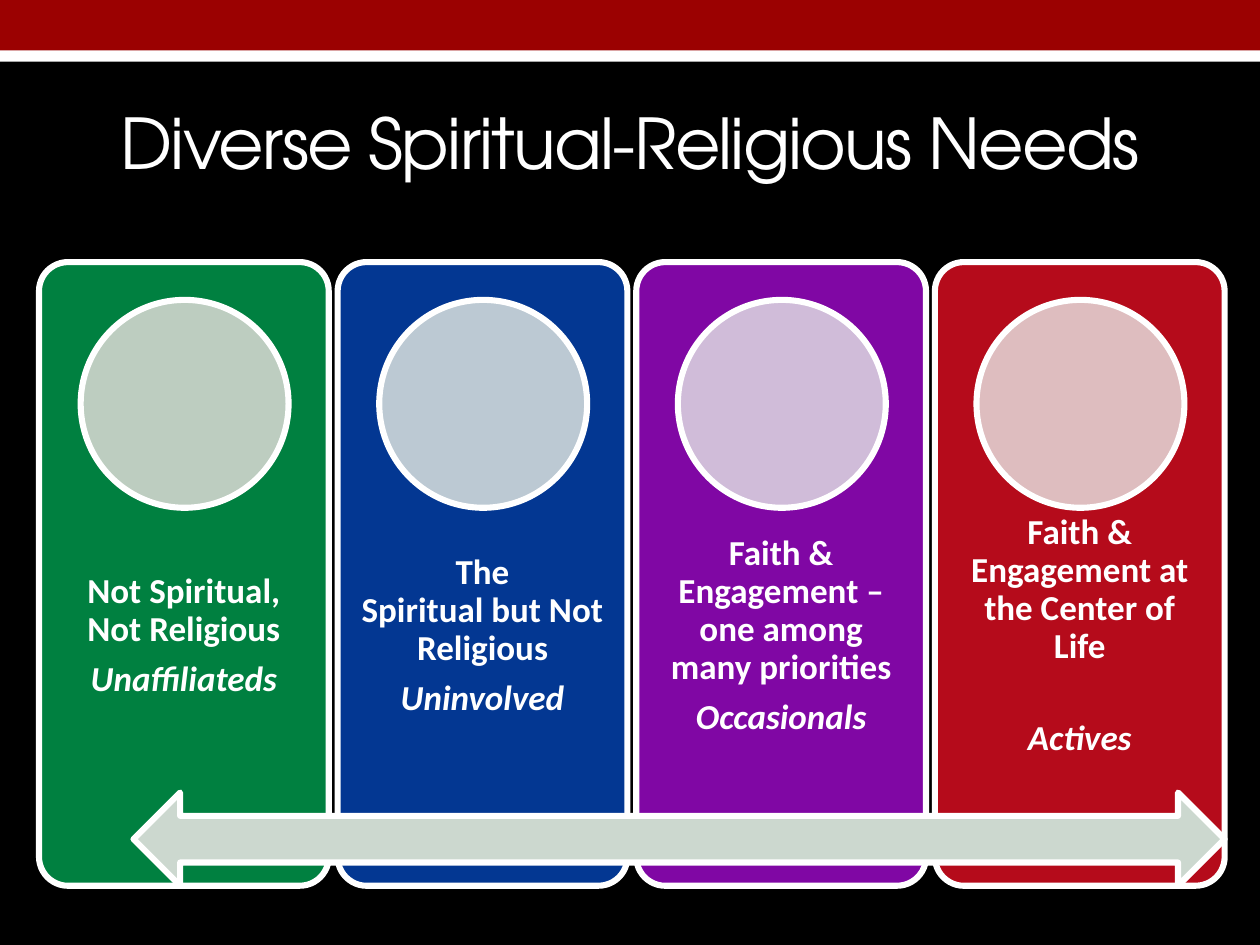
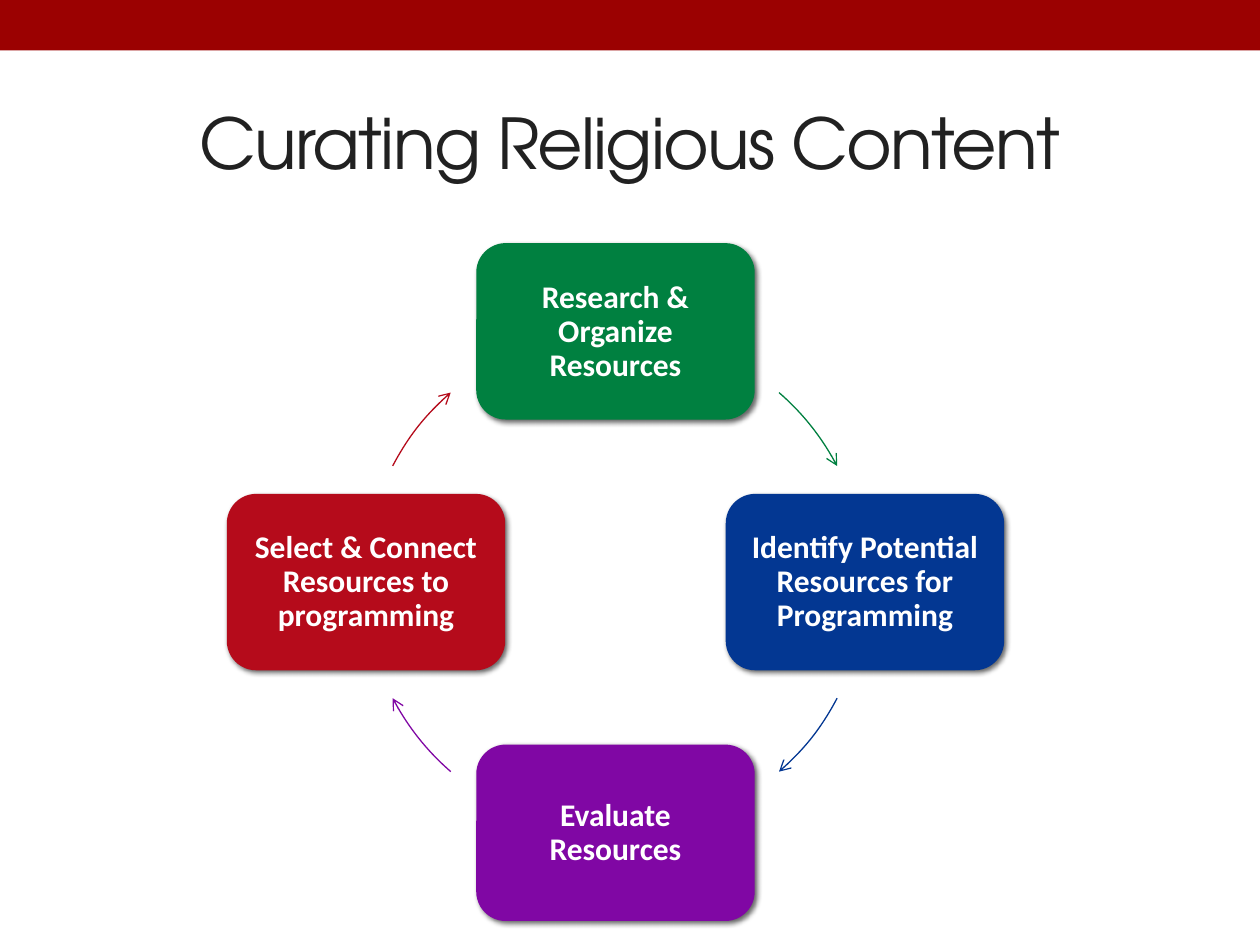
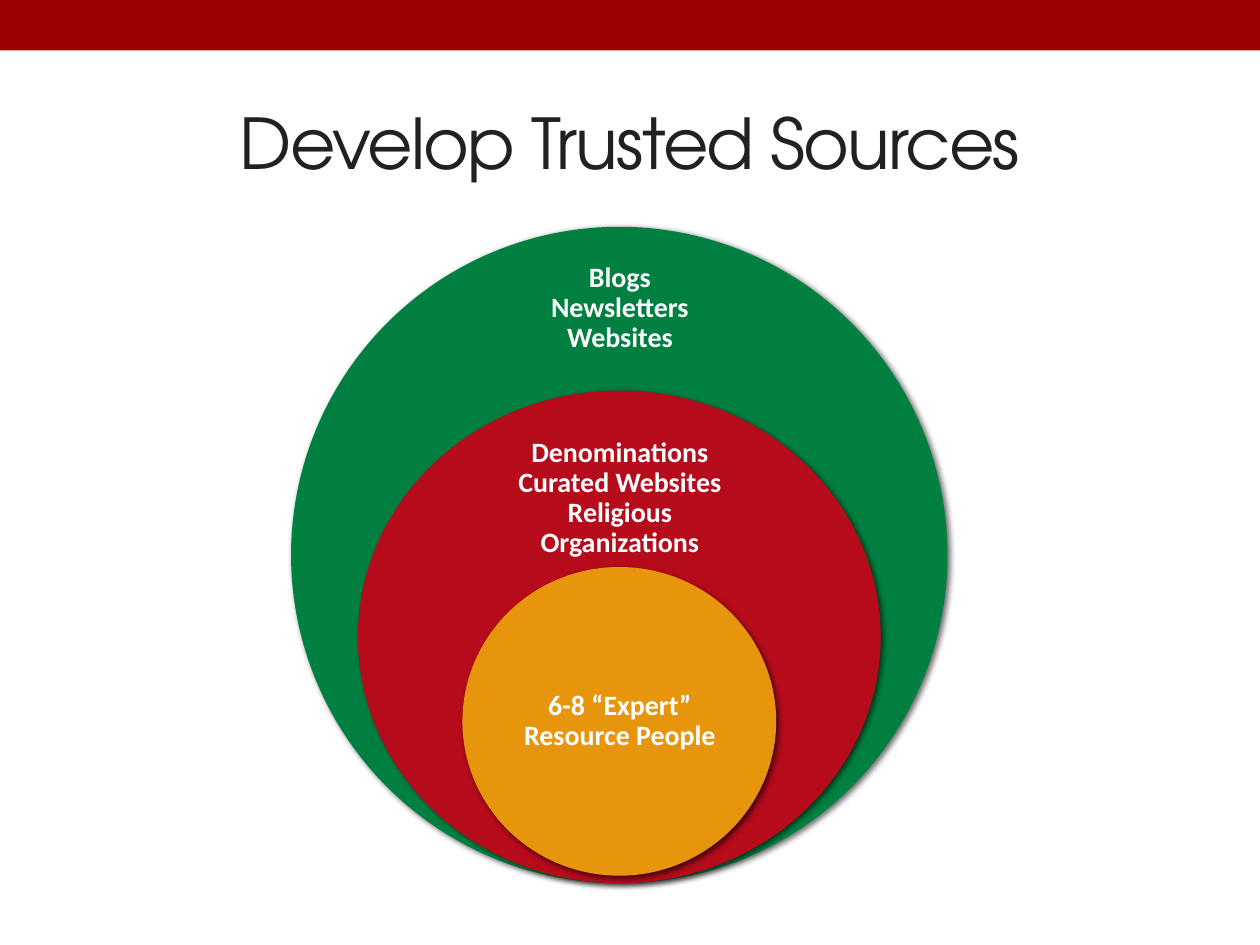
from copy import deepcopy
from dataclasses import dataclass
from typing import Optional

from lxml.etree import SubElement
from pptx import Presentation
from pptx.dml.color import RGBColor
from pptx.enum.shapes import MSO_SHAPE
from pptx.enum.text import MSO_ANCHOR, MSO_AUTO_SIZE, PP_ALIGN
from pptx.oxml.ns import qn
from pptx.util import Pt

EMU_PER_PX = 9144
SLIDE_WIDTH, SLIDE_HEIGHT = 1000, 750

WHITE = RGBColor(0xFF, 0xFF, 0xFF)
BLACK = RGBColor(0x00, 0x00, 0x00)
INK = RGBColor(0x21, 0x21, 0x21)
BAND_RED = RGBColor(0x9B, 0x01, 0x01)
GREEN = RGBColor(0x00, 0x80, 0x40)
BLUE = RGBColor(0x03, 0x37, 0x92)
PURPLE = RGBColor(0x80, 0x07, 0xA4)
RED = RGBColor(0xB5, 0x0B, 0x1B)
ORANGE = RGBColor(0xE8, 0x95, 0x0E)
PALE_GREEN = RGBColor(0xBD, 0xCD, 0xC0)
PALE_BLUE = RGBColor(0xBC, 0xC9, 0xD3)
PALE_PURPLE = RGBColor(0xD0, 0xBC, 0xD9)
PALE_RED = RGBColor(0xDE, 0xBD, 0xBF)
ARROW_GREY = RGBColor(0xCC, 0xD8, 0xCF)

TITLE_FONT = "TeX Gyre Adventor"
BODY_FONT = "Calibri"
OUTLINE_PT = 3.5


@dataclass(frozen=True)
class Box:
    left: int
    top: int
    width: int
    height: int

    def emu(self) -> tuple:
        return tuple(px * EMU_PER_PX for px in
                     (self.left, self.top, self.width, self.height))


@dataclass(frozen=True)
class Need:
    description: str
    group: str
    color: RGBColor
    tint: RGBColor
    gap_pt: int = 7


@dataclass(frozen=True)
class Step:
    text: str
    color: RGBColor
    column: int
    row: int
    arc_start: float
    arc_end: float


@dataclass(frozen=True)
class Ring:
    text: str
    color: RGBColor
    circle: Box
    label: Box


NEEDS = [
    Need("Not Spiritual, Not Religious", "Unaffiliateds", GREEN, PALE_GREEN),
    Need("The\vSpiritual but Not Religious", "Uninvolved", BLUE, PALE_BLUE),
    Need("Faith & Engagement – one among many priorities", "Occasionals",
         PURPLE, PALE_PURPLE),
    Need("Faith & Engagement at the Center of Life", "Actives", RED, PALE_RED,
         gap_pt=31),
]

STEPS = [
    Step("Research & Organize Resources", GREEN, 0, -1, 310.9, 332.4),
    Step("Identify Potential Resources for Programming", BLUE, 1, 0, 27.6, 49.1),
    Step("Evaluate Resources", PURPLE, 0, 1, 130.9, 152.4),
    Step("Select & Connect Resources to programming", RED, -1, 0, 207.6, 229.1),
]

RINGS = [
    Ring("Blogs\vNewsletters Websites", GREEN,
         Box(231, 180, 521, 521), Box(401, 206, 182, 78)),
    Ring("Denominations Curated Websites Religious Organizations", RED,
         Box(284, 310, 415, 391), Box(395, 359, 194, 73)),
    Ring("6-8 “Expert” Resource People", ORANGE,
         Box(367, 450, 249, 245), Box(404, 511, 176, 123)),
]


def write(paragraph, text: str, *, size: float, color: RGBColor = WHITE,
          font: str = BODY_FONT, bold: bool = True, italic: bool = False,
          line_spacing: float = 0.9, after: float = 0,
          tracking: int = 0) -> None:
    paragraph.text = text
    paragraph.alignment = PP_ALIGN.CENTER
    paragraph.line_spacing = line_spacing
    paragraph.space_after = Pt(after)
    for run in paragraph.runs:
        run.font.name = font
        run.font.size = Pt(size)
        run.font.bold = bold
        run.font.italic = italic
        run.font.color.rgb = color
        if tracking:
            run.font._element.set("spc", str(tracking))
    for line_break in paragraph._p.findall(qn("a:br")):
        line_break.append(deepcopy(paragraph.runs[0].font._element))


def add_label(slide, box: Box, inset: int):
    frame = slide.shapes.add_textbox(*box.emu()).text_frame
    frame.word_wrap = True
    frame.vertical_anchor = MSO_ANCHOR.MIDDLE
    frame.margin_left = frame.margin_right = inset * EMU_PER_PX
    frame.margin_top = frame.margin_bottom = inset * EMU_PER_PX
    return frame


def add_figure(slide, preset: MSO_SHAPE, box: Box, *,
               fill: Optional[RGBColor] = None, line: Optional[RGBColor] = None,
               line_pt: float = OUTLINE_PT, shadow: bool = False):
    figure = slide.shapes.add_shape(preset, *box.emu())
    figure.shadow.inherit = False
    if fill is None:
        figure.fill.background()
    else:
        figure.fill.solid()
        figure.fill.fore_color.rgb = fill
    if line is None:
        figure.line.fill.background()
    else:
        figure.line.color.rgb = line
        figure.line.width = Pt(line_pt)
    if shadow:
        effects = figure._element.spPr.find(qn("a:effectLst"))
        outer = SubElement(effects, qn("a:outerShdw"), blurRad=str(Pt(3)),
                           dist=str(Pt(2)), dir="2700000", rotWithShape="0")
        shade = SubElement(outer, qn("a:srgbClr"), val=str(BLACK))
        SubElement(shade, qn("a:alpha"), val="60000")
    return figure


def add_titled_slide(deck, heading: str, *, background: RGBColor = WHITE,
                     color: RGBColor = INK, margin: int = 50):
    slide = deck.slides.add_slide(deck.slide_layouts[5])
    slide.background.fill.solid()
    slide.background.fill.fore_color.rgb = background
    if background != WHITE:
        add_figure(slide, MSO_SHAPE.RECTANGLE, Box(0, 24, SLIDE_WIDTH, 25),
                   fill=WHITE)
    add_figure(slide, MSO_SHAPE.RECTANGLE, Box(0, 0, SLIDE_WIDTH, 40),
               fill=BAND_RED)
    title = slide.shapes.title
    title.left, title.top, title.width, title.height = Box(
        margin, 58, SLIDE_WIDTH - 2 * margin, 108).emu()
    title.text_frame.auto_size = MSO_AUTO_SIZE.NONE
    title.text_frame.vertical_anchor = MSO_ANCHOR.MIDDLE
    write(title.text_frame.paragraphs[0], heading, size=40, color=color,
          font=TITLE_FONT, bold=False, line_spacing=1.0, tracking=-100)
    return slide


def build_needs(deck) -> None:
    slide = add_titled_slide(deck, "Diverse Spiritual-Religious Needs",
                             background=BLACK, color=WHITE, margin=0)
    for index, need in enumerate(NEEDS):
        left = 31 + 237 * index
        card = add_figure(slide, MSO_SHAPE.ROUNDED_RECTANGLE,
                          Box(left, 208, 230, 495), fill=need.color, line=WHITE)
        card.adjustments[0] = 0.1
        label = add_label(slide, Box(left, 406, 230, 198), 16)
        write(label.paragraphs[0], need.description, size=20, after=need.gap_pt)
        write(label.add_paragraph(), need.group, size=20, italic=True, after=7)
        add_figure(slide, MSO_SHAPE.OVAL, Box(left + 33, 238, 165, 165),
                   fill=need.tint, line=WHITE)
    add_figure(slide, MSO_SHAPE.LEFT_RIGHT_ARROW, Box(106, 629, 866, 74),
               fill=ARROW_GREY, line=WHITE)


def build_cycle(deck) -> None:
    slide = add_titled_slide(deck, "Curating Religious Content")
    for step in STEPS:
        left, top = 378 + 198 * step.column, 392 + 199 * step.row
        add_figure(slide, MSO_SHAPE.ROUNDED_RECTANGLE, Box(left, top, 221, 140),
                   fill=step.color, shadow=True)
        label = add_label(slide, Box(left + 7, top + 7, 207, 127), 7)
        write(label.paragraphs[0], step.text, size=18, after=6.3)
        arc = add_figure(slide, MSO_SHAPE.ARC, Box(289, 263, 398, 398),
                         line=step.color, line_pt=0.75)
        for position, degrees in enumerate((step.arc_start, step.arc_end)):
            arc.adjustments[position] = degrees * 0.6
        SubElement(arc.line._get_or_add_ln(), qn("a:tailEnd"), type="arrow")


def build_sources(deck) -> None:
    slide = add_titled_slide(deck, "Develop Trusted Sources")
    for ring in RINGS:
        add_figure(slide, MSO_SHAPE.OVAL, ring.circle, fill=ring.color,
                   shadow=True)
        label = add_label(slide, ring.label, 12)
        write(label.paragraphs[0], ring.text, size=16, after=5.6)


def main() -> None:
    deck = Presentation()
    deck.slide_width = SLIDE_WIDTH * EMU_PER_PX
    deck.slide_height = SLIDE_HEIGHT * EMU_PER_PX
    build_needs(deck)
    build_cycle(deck)
    build_sources(deck)
    deck.save("out.pptx")


if __name__ == "__main__":
    main()
